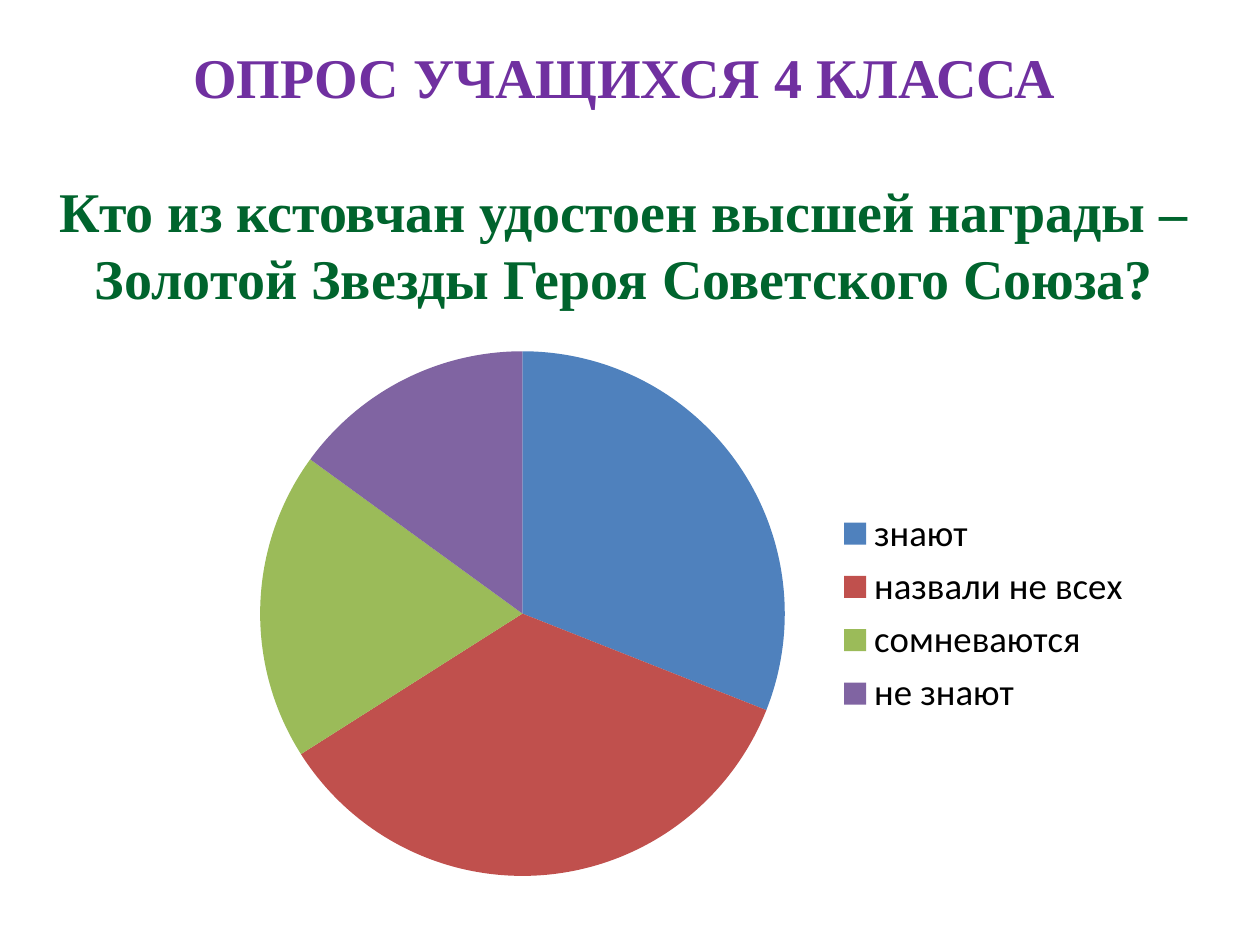
from pptx import Presentation
from pptx.chart.data import CategoryChartData
from pptx.dml.color import RGBColor
from pptx.enum.chart import XL_CHART_TYPE as ChartType, XL_LEGEND_POSITION as LegendPosition
from pptx.enum.text import PP_ALIGN as Align
from pptx.util import Inches, Pt

HEADING = "ОПРОС УЧАЩИХСЯ 4 КЛАССА"
QUESTION = "Кто из кстовчан удостоен высшей награды – Золотой Звезды Героя Советского Союза?"
ANSWERS = [
    ("знают", 31, "4F81BD"),
    ("назвали не всех", 35, "C0504D"),
    ("сомневаются", 19, "9BBB59"),
    ("не знают", 15, "8064A2"),
]


def color(value):
    return RGBColor.from_string(value)


def style_font(font, name, size, value, bold=False):
    font.name = name
    font.size = Pt(size)
    font.bold = bold
    font.color.rgb = color(value)


def write_line(paragraph, text, value):
    paragraph.text = text
    paragraph.alignment = Align.CENTER
    style_font(paragraph.runs[0].font, "Times New Roman", 32, value, bold=True)


def add_title(slide):
    shape = slide.shapes.add_textbox(Inches(0.35), Inches(0.29), Inches(9.21), Inches(2.79))
    text_frame = shape.text_frame
    text_frame.word_wrap = True
    write_line(text_frame.paragraphs[0], HEADING, "7030A0")
    question = text_frame.add_paragraph()
    write_line(question, QUESTION, "00642D")
    question.space_before = Pt(38)


def add_survey_chart(slide):
    data = CategoryChartData()
    data.categories = [answer for answer, _, _ in ANSWERS]
    data.add_series("Series 1", [share for _, share, _ in ANSWERS])
    chart = slide.shapes.add_chart(
        ChartType.PIE, Inches(1.69), Inches(2.65), Inches(7.4), Inches(4.44), data
    ).chart
    chart.has_title = False
    style_font(chart.font, "Calibri", 18, "000000")

    # Slice colours
    plot = chart.plots[0]
    plot.vary_by_categories = True
    for index, (_, _, value) in enumerate(ANSWERS):
        fill = plot.series[0].points[index].format.fill
        fill.solid()
        fill.fore_color.rgb = color(value)

    # Legend
    chart.has_legend = True
    chart.legend.position = LegendPosition.RIGHT
    chart.legend.include_in_layout = False
    style_font(chart.legend.font, "Calibri", 21, "000000")


def main():
    presentation = Presentation()
    presentation.slide_width = Inches(10)
    presentation.slide_height = Inches(7.5)
    slide = presentation.slides.add_slide(presentation.slide_layouts[6])
    add_title(slide)
    add_survey_chart(slide)
    presentation.save("out.pptx")


if __name__ == "__main__":
    main()
